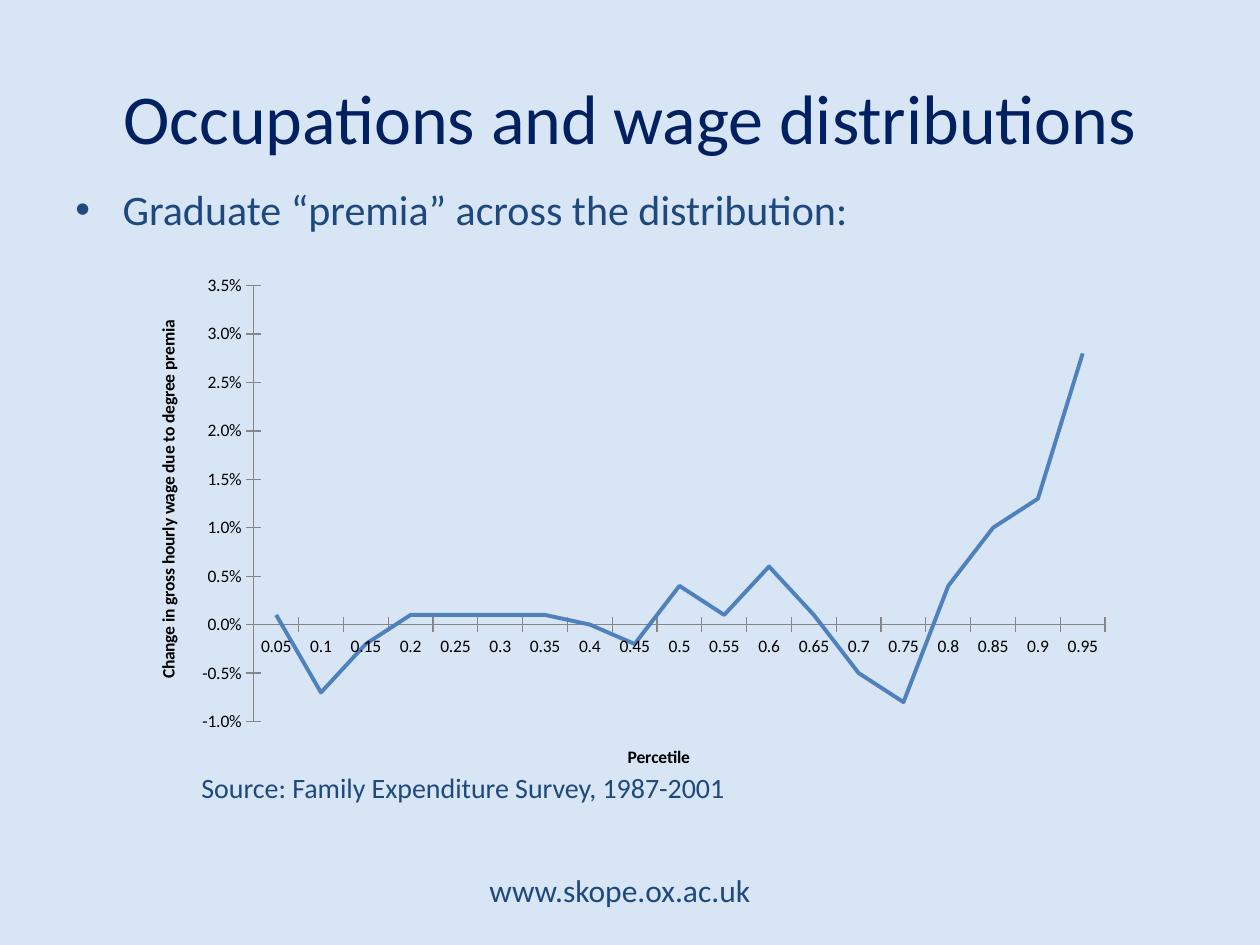
from lxml import etree
from pptx import Presentation, util as u
from pptx.chart.data import CategoryChartData
from pptx.dml.color import RGBColor
from pptx.enum import chart as ch, text
from pptx.oxml import ns

Pt = u.Pt
FONT = "Calibri"
COLORS = {"back": "D7E5F5", "title": "002060", "body": "1F497D",
          "line": "4F81BD", "axis": "868686", "label": "000000"}


def add_text(page, words, left, top, width, height, size, color, align, anchor):
    box = page.shapes.add_textbox(Pt(left), Pt(top), Pt(width), Pt(height))
    box.text_frame.word_wrap = True
    box.text_frame.vertical_anchor = anchor
    para = box.text_frame.paragraphs[0]
    para.alignment = align
    span = para.add_run()
    span.text = words
    span.font.name = FONT
    span.font.size = Pt(size)
    span.font.color.rgb = RGBColor.from_string(COLORS[color])
    return para


def set_layout(parent, index, **places):
    """Place a chart part by fractions of the chart's size."""
    for old in parent.findall(ns.qn("c:layout")):
        parent.remove(old)
    layout = etree.Element(ns.qn("c:layout"))
    manual = etree.SubElement(layout, ns.qn("c:manualLayout"))
    if "w" in places:
        etree.SubElement(manual, ns.qn("c:layoutTarget")).set("val", "inner")
    for axis in "xy":
        etree.SubElement(manual, ns.qn(f"c:{axis}Mode")).set("val", "edge")
    for key, value in places.items():
        etree.SubElement(manual, ns.qn(f"c:{key}")).set("val", str(value))
    parent.insert(index, layout)


deck = Presentation()
deck.slide_width, deck.slide_height = Pt(720), Pt(540)
page = deck.slides.add_slide(deck.slide_layouts[6])
page.background.fill.solid()
page.background.fill.fore_color.rgb = RGBColor.from_string(COLORS["back"])

# Title, bullet, source and web address
LEFT, CENTER = text.PP_ALIGN.LEFT, text.PP_ALIGN.CENTER
TOP, MIDDLE = text.MSO_ANCHOR.TOP, text.MSO_ANCHOR.MIDDLE
add_text(page, "Occupations and wage distributions",
         36, 21.6, 648, 90, 40, "title", CENTER, MIDDLE)
bullet = add_text(page, "Graduate “premia” across the distribution:",
                  36, 101.5, 648, 40, 24, "body", LEFT, TOP)
props = bullet._p.get_or_add_pPr()
props.set("marL", str(Pt(27)))
props.set("indent", str(-Pt(27)))
etree.SubElement(props, ns.qn("a:buFont")).set("typeface", "Arial")
etree.SubElement(props, ns.qn("a:buChar")).set("char", "•")
add_text(page, "Source: Family Expenditure Survey, 1987-2001",
         108, 436.5, 576, 27, 16, "body", LEFT, TOP)
add_text(page, "www.skope.ox.ac.uk",
         230.4, 494, 247.7, 29, 18, "body", CENTER, MIDDLE)

# Line chart of wage change by percentile
data = CategoryChartData()
data.categories = [f"{step * 5 / 100:g}" for step in range(1, 20)]
data.add_series("Series 1", [
    0.001, -0.007, -0.002, 0.001, 0.001, 0.001, 0.001, 0, -0.002, 0.004,
    0.001, 0.006, 0.001, -0.005, -0.008, 0.004, 0.01, 0.013, 0.028])
chart = page.shapes.add_chart(ch.XL_CHART_TYPE.LINE, Pt(70.6), Pt(151.2),
                              Pt(572.4), Pt(300.2), data).chart
chart.has_legend = False
chart.has_title = False
chart.font.name = FONT
chart.font.size = Pt(10)
chart.font.color.rgb = RGBColor.from_string(COLORS["label"])
plot = chart.plots[0]
plot.vary_by_categories = False
series = plot.series[0]
series.smooth = False
series.marker.style = ch.XL_MARKER_STYLE.NONE
series.format.line.width = Pt(2.25)
series.format.line.color.rgb = RGBColor.from_string(COLORS["line"])
set_layout(chart._chartSpace.chart.plotArea, 0, x=0.13, y=0.04, w=0.85, h=0.83)

# Axes and their titles
for axis, words, x, y in (
        (chart.category_axis, "Percetile", 0.5, 0.91),
        (chart.value_axis, "Change in gross hourly wage due to degree premia", 0.03, 0.1)):
    axis.has_major_gridlines = False
    axis.major_tick_mark = ch.XL_TICK_MARK.CROSS
    axis.minor_tick_mark = ch.XL_TICK_MARK.NONE
    axis.format.line.width = Pt(0.75)
    axis.format.line.color.rgb = RGBColor.from_string(COLORS["axis"])
    span = axis.axis_title.text_frame.paragraphs[0].add_run()
    span.text = words
    span.font.name = FONT
    span.font.size = Pt(10)
    span.font.bold = True
    span.font.color.rgb = RGBColor.from_string(COLORS["label"])
    set_layout(axis.axis_title._element, 1, x=x, y=y)
turned = chart.value_axis.axis_title.text_frame._txBody.bodyPr
turned.set("rot", "-5400000")
turned.set("vert", "horz")
chart.value_axis.minimum_scale = -0.01
chart.value_axis.maximum_scale = 0.035
chart.value_axis.major_unit = 0.005
chart.value_axis.tick_labels.number_format = "0.0%"
chart.value_axis.tick_labels.number_format_is_linked = False

deck.save("out.pptx")
